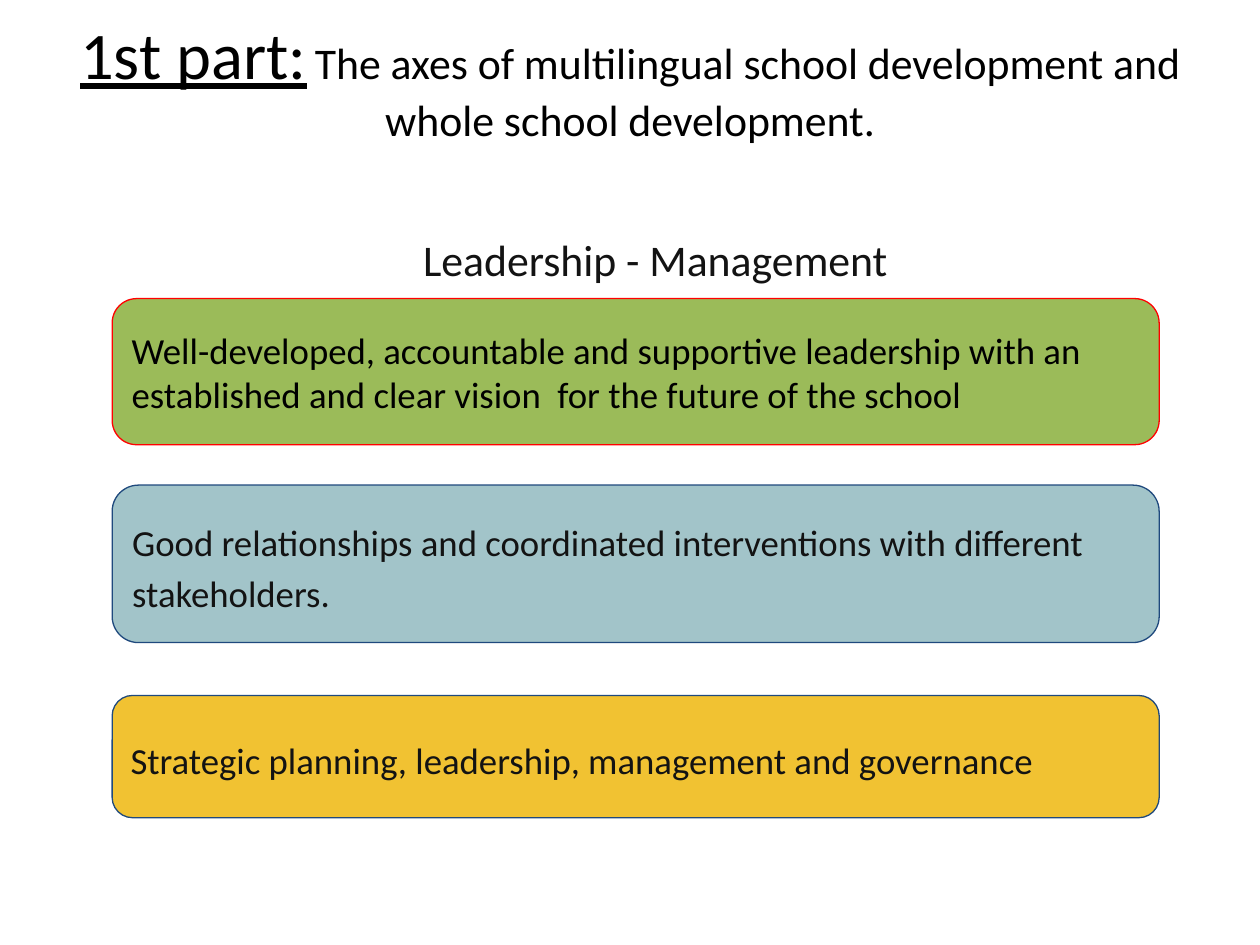
from pptx import Presentation
from pptx.dml.color import RGBColor
from pptx.enum.shapes import MSO_SHAPE
from pptx.enum.text import MSO_ANCHOR, MSO_AUTO_SIZE, PP_ALIGN
from pptx.util import Inches, Pt

ROUNDED = MSO_SHAPE.ROUNDED_RECTANGLE
MIDDLE, TOP = MSO_ANCHOR.MIDDLE, MSO_ANCHOR.TOP
CENTER, LEFT = PP_ALIGN.CENTER, PP_ALIGN.LEFT
NO_AUTOFIT = MSO_AUTO_SIZE.NONE

THEME = {
    "font": "Calibri",
    "black": "000000", "ink": "131313",
    "green": "9BBB59", "blue": "A2C4C9", "yellow": "F1C232",
    "red": "FF0000", "navy": "1F497D",
    "lead": 38, "heading": 25, "body": 21,
}

TITLE_RUNS = [
    ("1st part:", "lead", True),
    (" ", "body", False),
    ("The axes of multilingual school development and whole school development.",
     "heading", False),
]
HEADING = "Leadership - Management"
CARDS = [
    ("Well-developed, accountable and supportive leadership with an established "
     "and clear vision  for the future of the school",
     2.37, 1.16, "green", "red", "black", 1.0),
    ("Good relationships and coordinated interventions with different stakeholders.",
     3.85, 1.25, "blue", "navy", "ink", 1.15),
    ("Strategic planning, leadership, management and governance",
     5.52, 0.97, "yellow", "navy", "ink", 1.15),
]
CARD_LEFT, CARD_WIDTH = 0.89, 8.31


def color(name):
    return RGBColor.from_string(THEME[name])


def style_run(run, size, ink, underline=False):
    run.font.name = THEME["font"]
    run.font.size = Pt(THEME[size])
    run.font.color.rgb = color(ink)
    run.font.underline = underline


def prepare_frame(text_frame, anchor, vertical_margin):
    text_frame.word_wrap = True
    text_frame.auto_size = NO_AUTOFIT
    text_frame.vertical_anchor = anchor
    text_frame.margin_left = text_frame.margin_right = Inches(0.1)
    text_frame.margin_top = text_frame.margin_bottom = Inches(vertical_margin)


def add_title(slide):
    title = slide.shapes.title
    title.left, title.top = Inches(0.5), Inches(0)
    title.width, title.height = Inches(9), Inches(1.25)
    prepare_frame(title.text_frame, MIDDLE, 0.05)
    paragraph = title.text_frame.paragraphs[0]
    paragraph.alignment = CENTER
    for text, size, underline in TITLE_RUNS:
        run = paragraph.add_run()
        run.text = text
        style_run(run, size, "black", underline)


def add_heading(slide):
    heading = slide.shapes.add_textbox(Inches(0.7), Inches(1.8), Inches(9), Inches(0.55))
    prepare_frame(heading.text_frame, TOP, 0.05)
    heading.text_frame.text = HEADING
    paragraph = heading.text_frame.paragraphs[0]
    paragraph.alignment = CENTER
    style_run(paragraph.runs[0], "heading", "ink")


def add_card(slide, text, top, height, fill, line, ink, spacing):
    card = slide.shapes.add_shape(
        ROUNDED, Inches(CARD_LEFT), Inches(top), Inches(CARD_WIDTH), Inches(height))
    card.shadow.inherit = False
    card.fill.solid()
    card.fill.fore_color.rgb = color(fill)
    card.line.color.rgb = color(line)
    card.line.width = Pt(0.75)
    prepare_frame(card.text_frame, MIDDLE, 0.1)
    card.text_frame.text = text
    paragraph = card.text_frame.paragraphs[0]
    paragraph.alignment = LEFT
    paragraph.line_spacing = spacing
    style_run(paragraph.runs[0], "body", ink)


def main():
    presentation = Presentation()
    presentation.slide_width, presentation.slide_height = Inches(10), Inches(7.5)
    slide = presentation.slides.add_slide(presentation.slide_layouts[5])
    add_title(slide)
    add_heading(slide)
    for card in CARDS:
        add_card(slide, *card)
    presentation.save("out.pptx")


if __name__ == "__main__":
    main()
